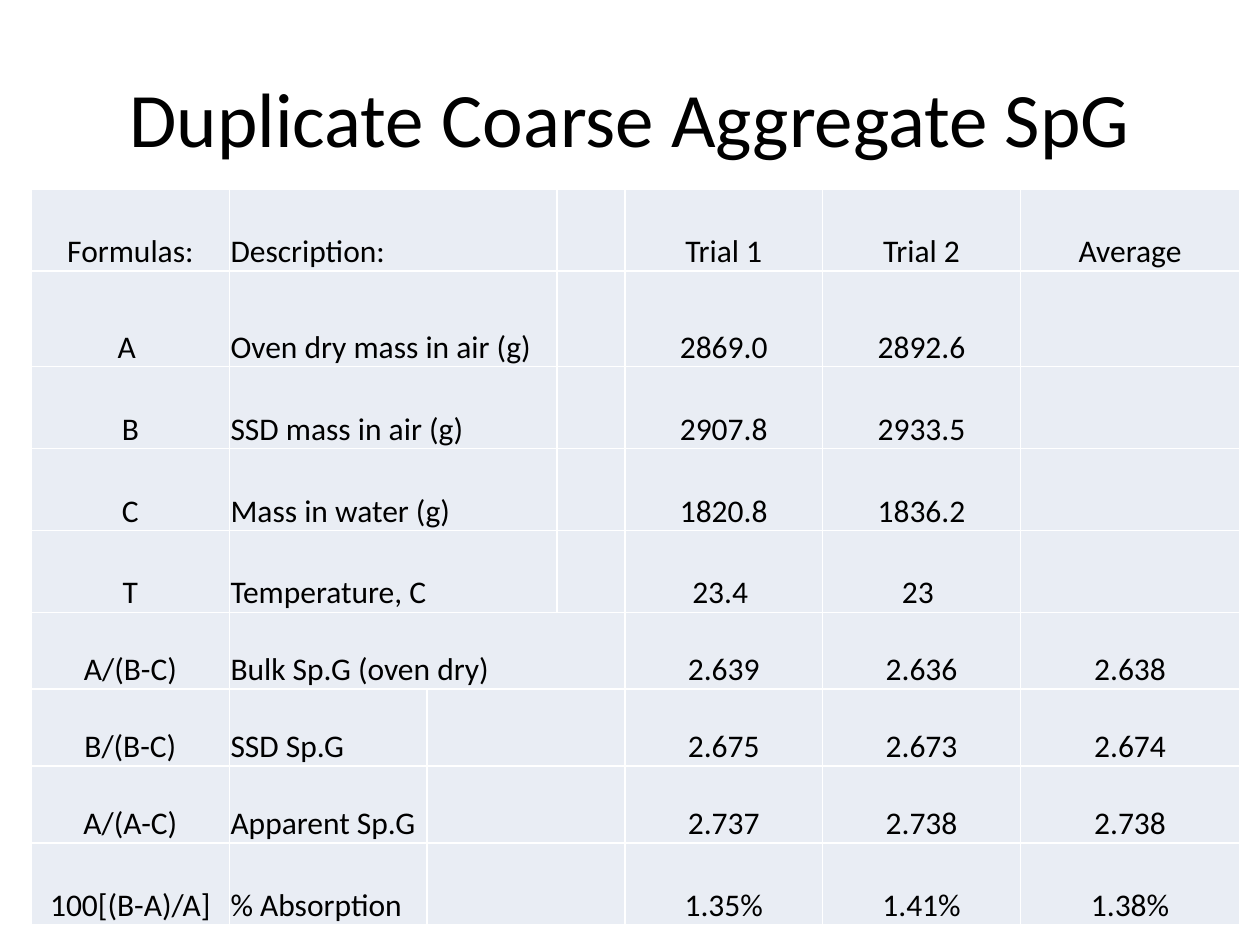
from lxml import etree
from pptx import Presentation
from pptx.dml.color import RGBColor
from pptx.enum.text import MSO_ANCHOR, PP_ALIGN
from pptx.oxml.ns import qn
from pptx.util import Inches, Pt

CENTER, LEFT = PP_ALIGN.CENTER, PP_ALIGN.LEFT
MIDDLE, BOTTOM = MSO_ANCHOR.MIDDLE, MSO_ANCHOR.BOTTOM
TITLE_ONLY = 5

COLORS = {"text": "000000", "cell": "E9EDF4", "border": "FFFFFF"}
FONT = "Calibri"
CELL_FORMAT = {
    "margin_left": Inches(0.01),
    "margin_right": Inches(0.01),
    "margin_top": Inches(0.01),
    "margin_bottom": 0,
    "vertical_anchor": BOTTOM,
}

COLUMN_WIDTHS = [1.57, 1.57, 1.03, 0.54, 1.57, 1.57, 1.74]
ROW_HEIGHTS = [0.65, 0.76, 0.65, 0.65, 0.65, 0.61, 0.61, 0.61, 0.65]
DESCRIPTION = 1   # first of the three columns under the description
VALUES = 4        # first of the trial and average columns

# Formula, description, trial 1, trial 2, average
ROWS = [
    ("Formulas:", "Description:", "Trial 1", "Trial 2", "Average"),
    ("A ", "Oven dry mass in air (g)", "2869.0", "2892.6", ""),
    ("B", "SSD mass in air (g)", "2907.8", "2933.5", ""),
    ("C", "Mass in water (g)", "1820.8", "1836.2", ""),
    ("T", "Temperature, C", "23.4 ", "23 ", ""),
    ("A/(B-C)", "Bulk Sp.G (oven dry)", "2.639", "2.636", "2.638"),
    ("B/(B-C)", "SSD Sp.G", "2.675", "2.673", "2.674"),
    ("A/(A-C)", "Apparent Sp.G", "2.737", "2.738", "2.738"),
    ("100[(B-A)/A]", "% Absorption", "1.35%", "1.41%", "1.38%"),
]
# First and last merged column of each row
MERGES = [(1, 2)] * 5 + [(1, 3)] + [(2, 3)] * 3


def apply_format(target, values):
    for name, value in values.items():
        setattr(target, name, value)


def write_text(frame, text, size, alignment):
    para = frame.paragraphs[0]
    para.alignment = alignment
    span = para.add_run()
    span.text = text
    apply_format(span.font, {"name": FONT, "size": Pt(size), "bold": False})
    span.font.color.rgb = RGBColor.from_string(COLORS["text"])


def add_title(page, text):
    title = page.shapes.title
    apply_format(title, {"left": Inches(0.5), "top": Inches(0.3),
                         "width": Inches(9), "height": Inches(1.25)})
    title.text_frame.vertical_anchor = MIDDLE
    write_text(title.text_frame, text, 44, CENTER)


def add_borders(cell):
    properties = cell._tc.get_or_add_tcPr()
    for side in ("lnL", "lnR", "lnT", "lnB"):
        line = etree.SubElement(properties, qn(f"a:{side}"), w=str(Pt(1)))
        fill = etree.SubElement(line, qn("a:solidFill"))
        etree.SubElement(fill, qn("a:srgbClr"), val=COLORS["border"])


def style_cell(cell):
    apply_format(cell, CELL_FORMAT)
    add_borders(cell)
    cell.fill.solid()
    cell.fill.fore_color.rgb = RGBColor.from_string(COLORS["cell"])


def add_results_table(page):
    frame = page.shapes.add_table(
        len(ROW_HEIGHTS), len(COLUMN_WIDTHS), Inches(0.25), Inches(1.5),
        Inches(sum(COLUMN_WIDTHS)), Inches(sum(ROW_HEIGHTS)))
    table = frame.table
    apply_format(table, {"first_row": False, "horz_banding": False})
    for column, width in zip(table.columns, COLUMN_WIDTHS):
        column.width = Inches(width)
    for row, height in zip(table.rows, ROW_HEIGHTS):
        row.height = Inches(height)
    for cell in table.iter_cells():
        style_cell(cell)

    # Merges and wording, row by row
    text_columns = [0, DESCRIPTION, VALUES, VALUES + 1, VALUES + 2]
    for index, (texts, (first, last)) in enumerate(zip(ROWS, MERGES)):
        table.cell(index, first).merge(table.cell(index, last))
        for column, text in zip(text_columns, texts):
            if text:
                alignment = LEFT if column == DESCRIPTION else CENTER
                write_text(table.cell(index, column).text_frame, text, 18, alignment)


def main():
    deck = Presentation()
    deck.slide_width, deck.slide_height = Inches(10), Inches(7.5)
    page = deck.slides.add_slide(deck.slide_layouts[TITLE_ONLY])
    add_title(page, "Duplicate Coarse Aggregate SpG")
    add_results_table(page)
    deck.save("out.pptx")


if __name__ == "__main__":
    main()
